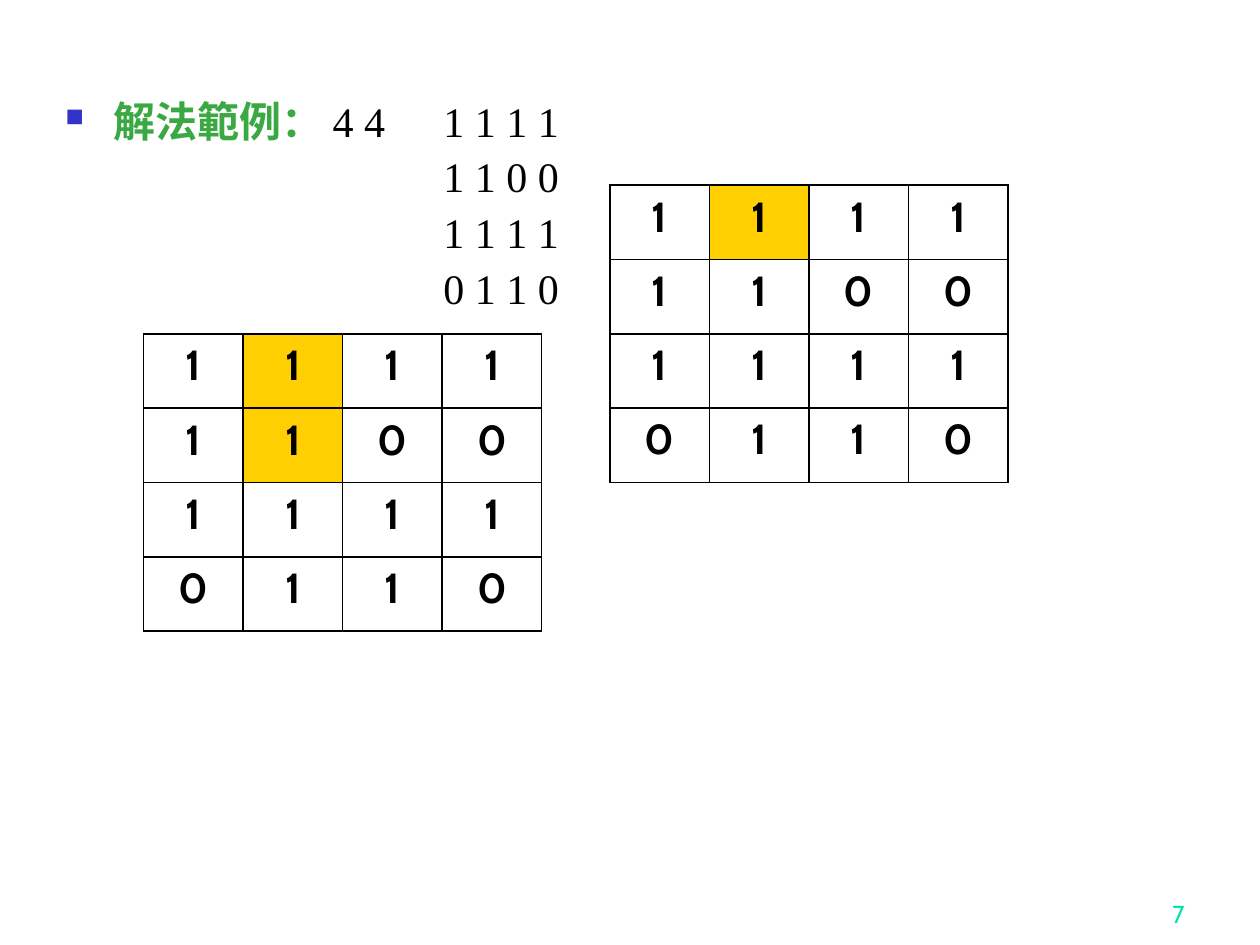
from pptx import Presentation
from pptx import util as u
from pptx.dml.color import RGBColor
from pptx.enum import text
from pptx.oxml import parse_xml
from pptx.oxml.ns import nsdecls

# Content
HEADING = "解法範例： "
SIZES = "4 4 \t"
MATRIX = ["1 1 1 1", "1 1 0 0", "1 1 1 1", "0 1 1 0"]
PAGE = "7"
GRIDS = [  # left, top, highlighted (row, column) cells
    (4.84, 1.47, {(0, 1)}),
    (1.14, 2.65, {(0, 1), (1, 1)}),
]
CELL_W, CELL_H = 0.79, 0.59
MATRIX_INDENT, BULLET_INDENT = 3.0, 0.38

THEME = dict(body="Times New Roman", grid="Cabin", size=24, page_size=14,
             green="3BA943", black="000000", bullet="3333CC", page="00E4A8",
             white="FFFFFF", gold="FFCF01")


def style(r, font, size, color, bold=False):
    r.font.name, r.font.size, r.font.bold = font, u.Pt(size), bold
    r.font.color.rgb = RGBColor.from_string(color)


def add_box(s, x, y, w, h, anchor):
    tf = s.shapes.add_textbox(*map(u.Inches, (x, y, w, h))).text_frame
    tf.word_wrap, tf.vertical_anchor = True, anchor
    return tf


def add_bullet(p):
    pPr = p._p.get_or_add_pPr()
    for tag in (f'<a:buClr {nsdecls("a")}><a:srgbClr val="{THEME["bullet"]}"/></a:buClr>',
                f'<a:buSzPct {nsdecls("a")} val="60000"/>',
                f'<a:buChar {nsdecls("a")} char="■"/>'):
        pPr.append(parse_xml(tag))


def add_borders(cell):
    tcPr = cell._tc.get_or_add_tcPr()
    for i, side in enumerate(("lnL", "lnR", "lnT", "lnB")):
        tcPr.insert(i, parse_xml(
            f'<a:{side} {nsdecls("a")} w="12700"><a:solidFill>'
            f'<a:srgbClr val="{THEME["black"]}"/></a:solidFill></a:{side}>'))


def add_grid(s, x, y, marked):
    rows = [line.split() for line in MATRIX]
    n = len(rows)
    tbl = s.shapes.add_table(n, n, u.Inches(x), u.Inches(y),
                             u.Inches(n * CELL_W), u.Inches(n * CELL_H)).table
    for i, row in enumerate(rows):
        tbl.rows[i].height = u.Inches(CELL_H)
        tbl.columns[i].width = u.Inches(CELL_W)
        for j, value in enumerate(row):
            cell = tbl.cell(i, j)
            cell.fill.solid()
            cell.fill.fore_color.rgb = RGBColor.from_string(
                THEME["gold" if (i, j) in marked else "white"])
            add_borders(cell)
            p = cell.text_frame.paragraphs[0]
            p.text, p.alignment = value, text.PP_ALIGN.CENTER
            style(p.runs[0], THEME["grid"], THEME["size"], THEME["black"], True)


def main():
    prs = Presentation()
    prs.slide_width, prs.slide_height = u.Inches(10), u.Inches(7.5)
    s = prs.slides.add_slide(prs.slide_layouts[6])

    # Page number
    tf = add_box(s, 7.42, 6.92, 2.08, 0.5, text.MSO_ANCHOR.BOTTOM)
    tf.text = PAGE
    p = tf.paragraphs[0]
    p.alignment = text.PP_ALIGN.RIGHT
    style(p.runs[0], THEME["grid"], THEME["page_size"], THEME["page"])

    # Sample input: heading and first row share a line
    tf = add_box(s, 0.42, 0.75, 8.83, 6.15, text.MSO_ANCHOR.TOP)
    tf.text = "\n".join([HEADING] + MATRIX[1:])
    first = tf.paragraphs[0]
    first.add_run().text = SIZES + MATRIX[0]
    for p in tf.paragraphs:
        p.line_spacing, p.space_before = 0.9, u.Pt(6)
        indent = BULLET_INDENT if p._p is first._p else MATRIX_INDENT
        p._p.get_or_add_pPr().set("marL", str(u.Inches(indent)))
        for r in p.runs:
            style(r, THEME["body"], THEME["size"], THEME["black"])
    first._p.pPr.set("indent", str(-u.Inches(BULLET_INDENT)))
    add_bullet(first)
    style(first.runs[0], THEME["body"], THEME["size"], THEME["green"], True)

    # Matrices
    for x, y, marked in GRIDS:
        add_grid(s, x, y, marked)

    prs.save("out.pptx")


if __name__ == "__main__":
    main()
